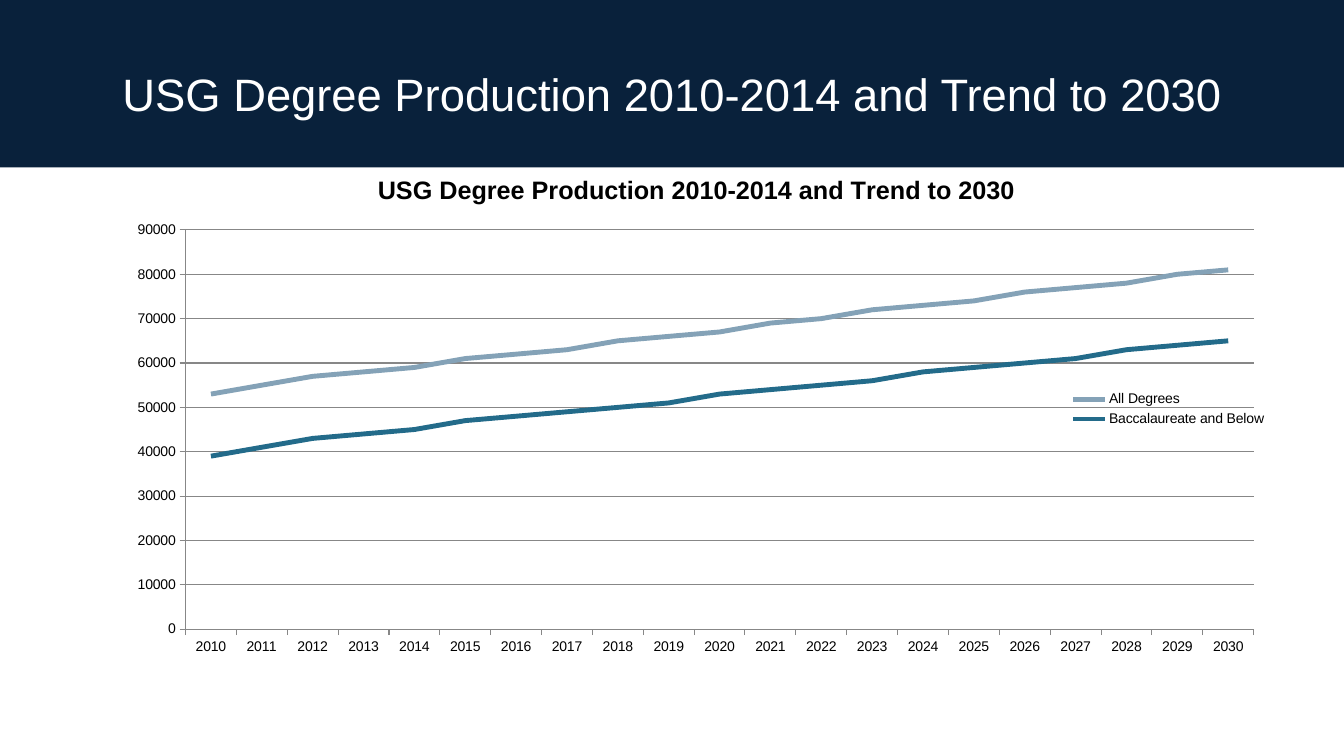
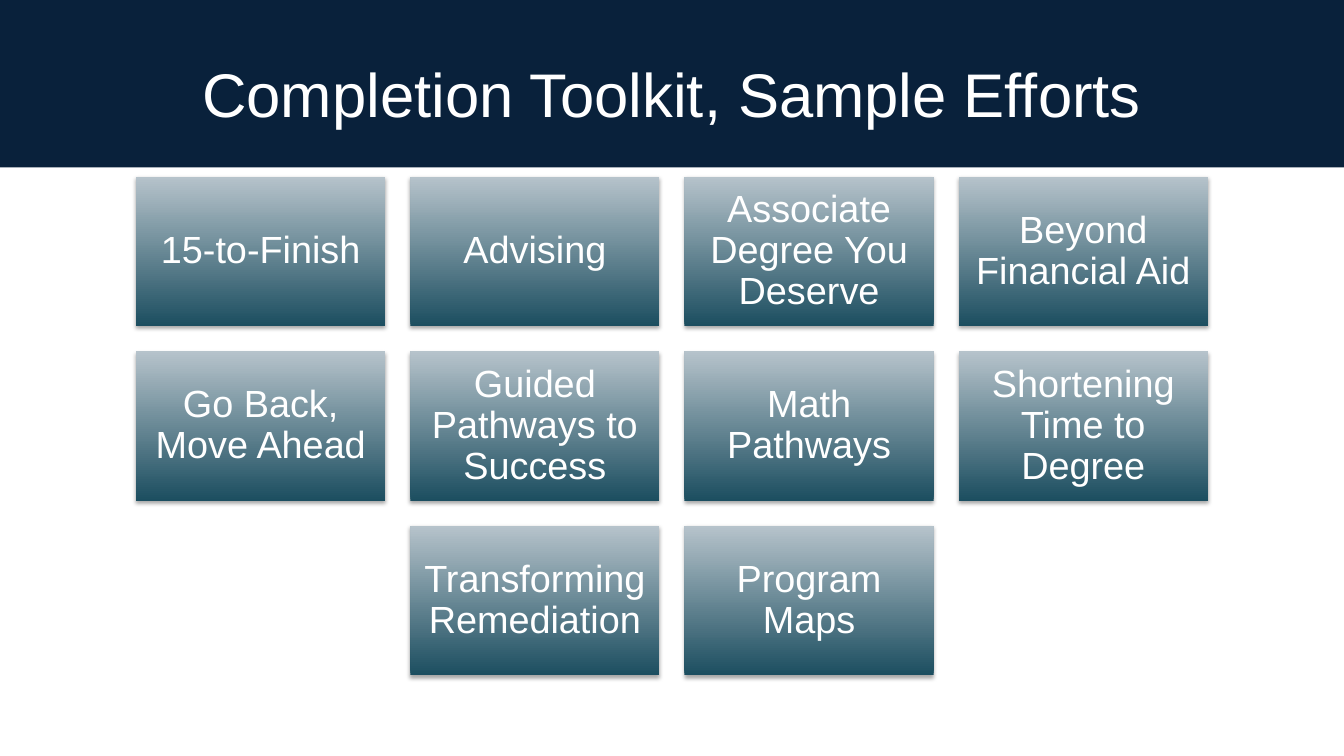
"""Build two slides on degree production and completion efforts."""

from dataclasses import dataclass

from lxml import etree
from pptx import Presentation
from pptx.chart.axis import CategoryAxis, ValueAxis
from pptx.chart.chart import Chart
from pptx.chart.data import CategoryChartData
from pptx.dml.color import RGBColor
from pptx.enum.chart import XL_CHART_TYPE, XL_LEGEND_POSITION, XL_TICK_MARK
from pptx.enum.shapes import MSO_SHAPE
from pptx.enum.text import MSO_ANCHOR, MSO_AUTO_SIZE, PP_ALIGN
from pptx.oxml import parse_xml
from pptx.oxml.ns import nsdecls, qn
from pptx.slide import Slide
from pptx.text.text import Font
from pptx.util import Cm, Pt

LINE_CHART = XL_CHART_TYPE.LINE
LEGEND_RIGHT = XL_LEGEND_POSITION.RIGHT
TICK_OUTSIDE = XL_TICK_MARK.OUTSIDE
RECTANGLE = MSO_SHAPE.RECTANGLE
MIDDLE = MSO_ANCHOR.MIDDLE
NO_AUTOFIT = MSO_AUTO_SIZE.NONE
CENTER = PP_ALIGN.CENTER

FONT_NAME = "Arial"
NAVY = "09213B"
WHITE = "FFFFFF"
BLACK = "000000"
GRID_GRAY = "878787"
CARD_DARK = "1C4E60"
CARD_LIGHT = "B6C3CB"

SLIDE_WIDTH, SLIDE_HEIGHT = 33.87, 19.05
CARD_WIDTH, CARD_HEIGHT, CARD_GAP = 6.28, 3.77, 0.63
CARDS_TOP = 4.45
CARD_INSET = 0.28

CHART_TITLE = "USG Degree Production 2010-2014 and Trend to 2030"
YEARS = range(2010, 2031)


@dataclass(frozen=True)
class DegreeSeries:
    """A line of the chart, in thousands of degrees."""

    name: str
    color: str
    thousands: tuple[int, ...]


@dataclass(frozen=True)
class Card:
    """A toolkit effort and its place in centimetres."""

    text: str
    left: float
    top: float


DEGREE_SERIES = (
    DegreeSeries("All Degrees", "84A2B7", (
        53, 55, 57, 58, 59, 61, 62, 63, 65, 66, 67,
        69, 70, 72, 73, 74, 76, 77, 78, 80, 81)),
    DegreeSeries("Baccalaureate and Below", "236B8A", (
        39, 41, 43, 44, 45, 47, 48, 49, 50, 51, 53,
        54, 55, 56, 58, 59, 60, 61, 63, 64, 65)),
)

EFFORT_ROWS = (
    ("15-to-Finish", "Advising", "Associate Degree You Deserve", "Beyond Financial Aid"),
    ("Go Back, Move Ahead", "Guided Pathways to Success", "Math Pathways",
     "Shortening Time to Degree"),
    ("Transforming Remediation", "Program Maps"),
)


def color(value: str) -> RGBColor:
    """Return the colour of a hex string."""
    return RGBColor.from_string(value)


def set_font(font: Font, size: float, text_color: str, bold: bool = False) -> None:
    """Apply the shared typeface with a size, colour and weight."""
    font.name = FONT_NAME
    font.size = Pt(size)
    font.bold = bold
    font.color.rgb = color(text_color)


def add_band(slide: Slide) -> None:
    """Draw the title band behind the other shapes."""
    band = slide.shapes.add_shape(RECTANGLE, 0, 0, Cm(SLIDE_WIDTH), Cm(4.22))
    band.shadow.inherit = False
    band.fill.solid()
    band.fill.fore_color.rgb = color(NAVY)
    band.line.fill.background()
    slide.shapes.element.insert(2, band.element)


def set_title(slide: Slide, text: str, size: float) -> None:
    """Place and format the slide title."""
    title = slide.shapes.title
    title.left, title.top = Cm(1.7), Cm(0.76)
    title.width, title.height = Cm(30.48), Cm(3.18)
    frame = title.text_frame
    frame.text = text
    frame.auto_size = NO_AUTOFIT
    frame.vertical_anchor = MIDDLE
    paragraph = frame.paragraphs[0]
    paragraph.alignment = CENTER
    set_font(paragraph.font, size, WHITE)


def manual_layout(inner: bool, x: float, y: float, w: float, h: float) -> etree._Element:
    """Return a chart layout given as fractions of the chart area."""
    layout = parse_xml(f"<c:layout {nsdecls('c')}><c:manualLayout/></c:layout>")
    values = {"layoutTarget": "inner"} if inner else {}
    values |= {"xMode": "edge", "yMode": "edge", "x": x, "y": y, "w": w, "h": h}
    for tag, value in values.items():
        etree.SubElement(layout[0], qn(f"c:{tag}")).set("val", str(value))
    return layout


def format_axis(axis: CategoryAxis | ValueAxis) -> None:
    """Give an axis its font, line and tick marks."""
    set_font(axis.tick_labels.font, 10, BLACK)
    axis.format.line.color.rgb = color(GRID_GRAY)
    axis.major_tick_mark = TICK_OUTSIDE


def format_chart(chart: Chart) -> None:
    """Format the title, axes, legend and plot area."""
    chart.has_title = True
    title_frame = chart.chart_title.text_frame
    title_frame.text = CHART_TITLE
    set_font(title_frame.paragraphs[0].font, 18, BLACK, bold=True)

    format_axis(chart.category_axis)
    value_axis = chart.value_axis
    format_axis(value_axis)
    value_axis.minimum_scale, value_axis.maximum_scale = 0, 90000
    value_axis.major_unit = 10000
    value_axis.major_gridlines.format.line.color.rgb = color(GRID_GRAY)

    chart.has_legend = True
    legend = chart.legend
    legend.position = LEGEND_RIGHT
    legend.include_in_layout = True
    set_font(legend.font, 10, BLACK)
    legend_element = chart.element.find(".//" + qn("c:legend"))
    legend_element.find(qn("c:legendPos")).addnext(
        manual_layout(False, 0.82, 0.46, 0.18, 0.08))

    plot_area = chart.element.find(".//" + qn("c:plotArea"))
    for old_layout in plot_area.findall(qn("c:layout")):
        plot_area.remove(old_layout)
    plot_area.insert(0, manual_layout(True, 0.06, 0.15, 0.92, 0.78))


def add_degree_chart(slide: Slide) -> None:
    """Draw the degree production line chart."""
    data = CategoryChartData(number_format="General")
    data.categories = [str(year) for year in YEARS]
    for degree in DEGREE_SERIES:
        data.add_series(degree.name, [value * 1000 for value in degree.thousands])
    chart = slide.shapes.add_chart(
        LINE_CHART, Cm(2.92), Cm(3.86), Cm(29.26), Cm(12.9), data).chart
    format_chart(chart)
    plot = chart.plots[0]
    plot.vary_by_categories = False
    for series, degree in zip(plot.series, DEGREE_SERIES):
        series.smooth = False
        series.format.line.width = Pt(3.5)
        series.format.line.color.rgb = color(degree.color)


def lay_out_cards() -> list[Card]:
    """Place the efforts in rows centred on the slide."""
    cards = []
    for row, efforts in enumerate(EFFORT_ROWS):
        row_width = len(efforts) * (CARD_WIDTH + CARD_GAP) - CARD_GAP
        row_left = (SLIDE_WIDTH - row_width) / 2
        top = CARDS_TOP + row * (CARD_HEIGHT + CARD_GAP)
        for column, text in enumerate(efforts):
            cards.append(Card(text, row_left + column * (CARD_WIDTH + CARD_GAP), top))
    return cards


def add_card(slide: Slide, card: Card) -> None:
    """Draw a shaded card with centred text."""
    shape = slide.shapes.add_shape(
        RECTANGLE, Cm(card.left), Cm(card.top), Cm(CARD_WIDTH), Cm(CARD_HEIGHT))
    shape.fill.gradient()
    shape.fill.gradient_angle = 90
    for stop, stop_color in zip(shape.fill.gradient_stops, (CARD_DARK, CARD_LIGHT)):
        stop.color.rgb = color(stop_color)
    shape.line.fill.background()
    shape.element.spPr.append(parse_xml(
        f"<a:effectLst {nsdecls('a')}>"
        f'<a:outerShdw blurRad="{Pt(3.1)}" dist="{Pt(1.8)}" dir="5400000" rotWithShape="0">'
        f'<a:srgbClr val="{BLACK}"><a:alpha val="35000"/></a:srgbClr>'
        "</a:outerShdw></a:effectLst>"))
    frame = shape.text_frame
    frame.text = card.text
    frame.word_wrap = True
    frame.vertical_anchor = MIDDLE
    frame.margin_left = frame.margin_right = Cm(CARD_INSET)
    frame.margin_top = frame.margin_bottom = Cm(CARD_INSET)
    paragraph = frame.paragraphs[0]
    paragraph.alignment = CENTER
    paragraph.line_spacing = 0.9
    set_font(paragraph.font, 27, WHITE)


def main() -> None:
    """Build and save the presentation."""
    presentation = Presentation()
    presentation.slide_width = Cm(SLIDE_WIDTH)
    presentation.slide_height = Cm(SLIDE_HEIGHT)
    layout = presentation.slide_layouts.get_by_name("Title Only")

    trend_slide = presentation.slides.add_slide(layout)
    add_band(trend_slide)
    set_title(trend_slide, CHART_TITLE, 32.4)
    add_degree_chart(trend_slide)

    toolkit_slide = presentation.slides.add_slide(layout)
    add_band(toolkit_slide)
    set_title(toolkit_slide, "Completion Toolkit, Sample Efforts", 44)
    for card in lay_out_cards():
        add_card(toolkit_slide, card)

    presentation.save("out.pptx")


if __name__ == "__main__":
    main()
